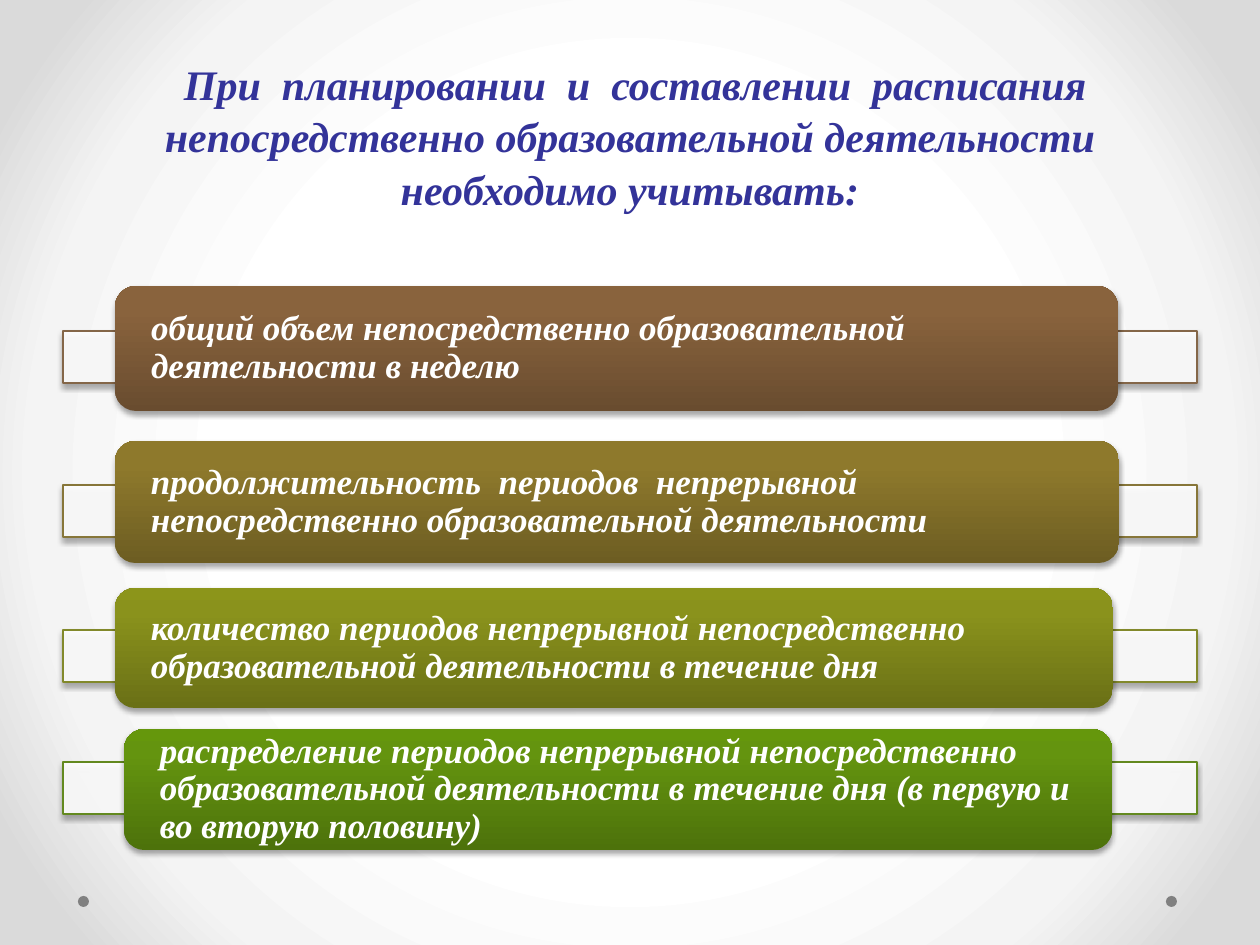
from pptx import Presentation
from pptx import util as u
from pptx.dml.color import RGBColor
from pptx.enum import shapes, text
from pptx.oxml import parse_xml
from pptx.oxml.ns import nsdecls

PX = 914400 / 126  # 126 px to the inch


def px(*values):
    return [u.Emu(round(v * PX)) for v in values]


def rgb(value):
    return RGBColor.from_string(value)


prs = Presentation()
prs.slide_width, prs.slide_height = px(1260, 945)
s = prs.slides.add_slide(prs.slide_layouts[5])

GRADIENT = '<a:gradFill {ns} rotWithShape="1"><a:gsLst>{stops}</a:gsLst>{kind}</a:gradFill>'
STOP = '<a:gs pos="{}000"><a:srgbClr val="{}"/></a:gs>'
SHADOW = (f'<a:effectLst {nsdecls("a")}><a:outerShdw blurRad="39370" dist="22860" dir="5400000" '
          'rotWithShape="0"><a:srgbClr val="000000"><a:alpha val="35000"/></a:srgbClr>'
          '</a:outerShdw></a:effectLst>')

# Background: white centre fading to grey corners
stops = "".join(STOP.format(*st) for st in [(50, "FFFFFF"), (76, "F4F4F4"), (92, "DADADA")])
radial = ('<a:path path="circle"><a:fillToRect l="50000" t="50000" r="50000" b="50000"/>'
          '</a:path>')
fill = GRADIENT.format(ns="", stops=stops, kind=radial)
s.element.cSld.insert(0, parse_xml(
    f'<p:bg {nsdecls("p", "a")}><p:bgPr>{fill}<a:effectLst/></p:bgPr></p:bg>'))

# Corner dots
for left in (78, 1166):
    sp = s.shapes.add_shape(shapes.MSO_SHAPE.OVAL, *px(left, 896, 11, 11))
    sp.shadow.inherit = False
    sp.fill.solid()
    sp.fill.fore_color.rgb = rgb("808080")
    sp.line.fill.background()

# Title
title = s.shapes.title
title.left, title.top, title.width, title.height = px(63, 0, 1134, 220)
tf = title.text_frame
tf.text = (" При  планировании  и  составлении  расписания непосредственно "
           "образовательной деятельности необходимо учитывать:")
tf.auto_size = text.MSO_AUTO_SIZE.NONE
tf.vertical_anchor = text.MSO_ANCHOR.BOTTOM
p = tf.paragraphs[0]
p.alignment = text.PP_ALIGN.CENTER
p.line_spacing = 1.04
font = p.runs[0].font
font.name, font.size, font.bold, font.italic = "Times New Roman", u.Pt(24), True, True
font.color.rgb = rgb("333399")

# Requirements: strip top, bar box, strip line colour, gradient from bottom to top, wording
rows = [
    (331, (115, 286, 1003, 125), "846648", ("694C2F", "89633D", "8B633C"),
     "общий объем непосредственно образовательной деятельности в неделю"),
    (485, (115, 441, 1004, 122), "877639", ("6D5D22", "8E792C", "917B2A"),
     "продолжительность  периодов  непрерывной  непосредственно "
     "образовательной деятельности"),
    (630, (115, 588, 998, 120), "82892B", ("6A7016", "8A921C", "8C951A"),
     "количество периодов непрерывной непосредственно образовательной "
     "деятельности в течение дня"),
    (762, (124, 729, 988, 121), "63891F", ("4D720B", "64940F", "65970C"),
     "распределение периодов непрерывной непосредственно образовательной "
     "деятельности в течение дня (в первую и во вторую половину)"),
]
for strip_top, box, line, colours, words in rows:
    # Strip behind the bar
    strip = s.shapes.add_shape(shapes.MSO_SHAPE.RECTANGLE, *px(63, strip_top, 1134, 52))
    strip.fill.solid()
    strip.fill.fore_color.rgb = rgb("FFFFFF")
    colour = strip.element.spPr.find(".//{*}srgbClr")
    colour.append(parse_xml(f'<a:alpha {nsdecls("a")} val="90000"/>'))
    strip.line.color.rgb = rgb(line)
    strip.line.width = u.Pt(0.75)
    strip.element.spPr.append(parse_xml(SHADOW))

    # Rounded bar with its text
    bar = s.shapes.add_shape(shapes.MSO_SHAPE.ROUNDED_RECTANGLE, *px(*box))
    stops = "".join(STOP.format(*st) for st in zip((0, 80, 100), colours))
    bar.line.fill.background()
    bar.element.spPr.find("{*}ln").addprevious(parse_xml(GRADIENT.format(
        ns=nsdecls("a"), stops=stops, kind='<a:lin ang="16200000" scaled="0"/>')))
    bar.element.spPr.append(parse_xml(SHADOW))
    tf = bar.text_frame
    tf.text = words
    tf.word_wrap = True
    tf.vertical_anchor = text.MSO_ANCHOR.MIDDLE
    tf.margin_left, tf.margin_top, tf.margin_right, tf.margin_bottom = px(30, 0, 30, 0)
    p = tf.paragraphs[0]
    p.alignment = text.PP_ALIGN.LEFT
    p.line_spacing = 0.9
    font = p.runs[0].font
    font.name, font.size, font.bold, font.italic = "Times New Roman", u.Pt(20), True, True
    font.color.rgb = rgb("FFFFFF")

prs.save("out.pptx")
